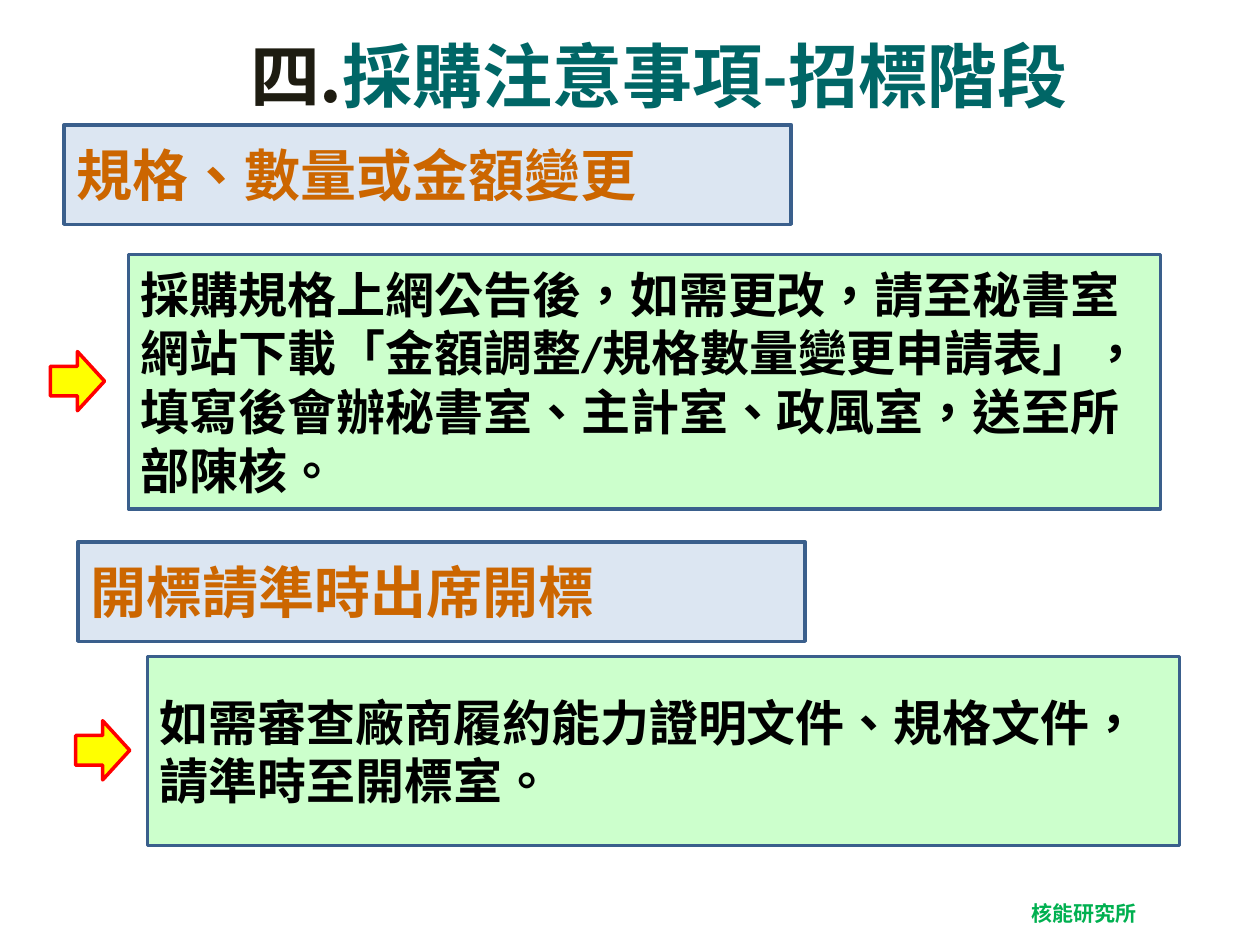
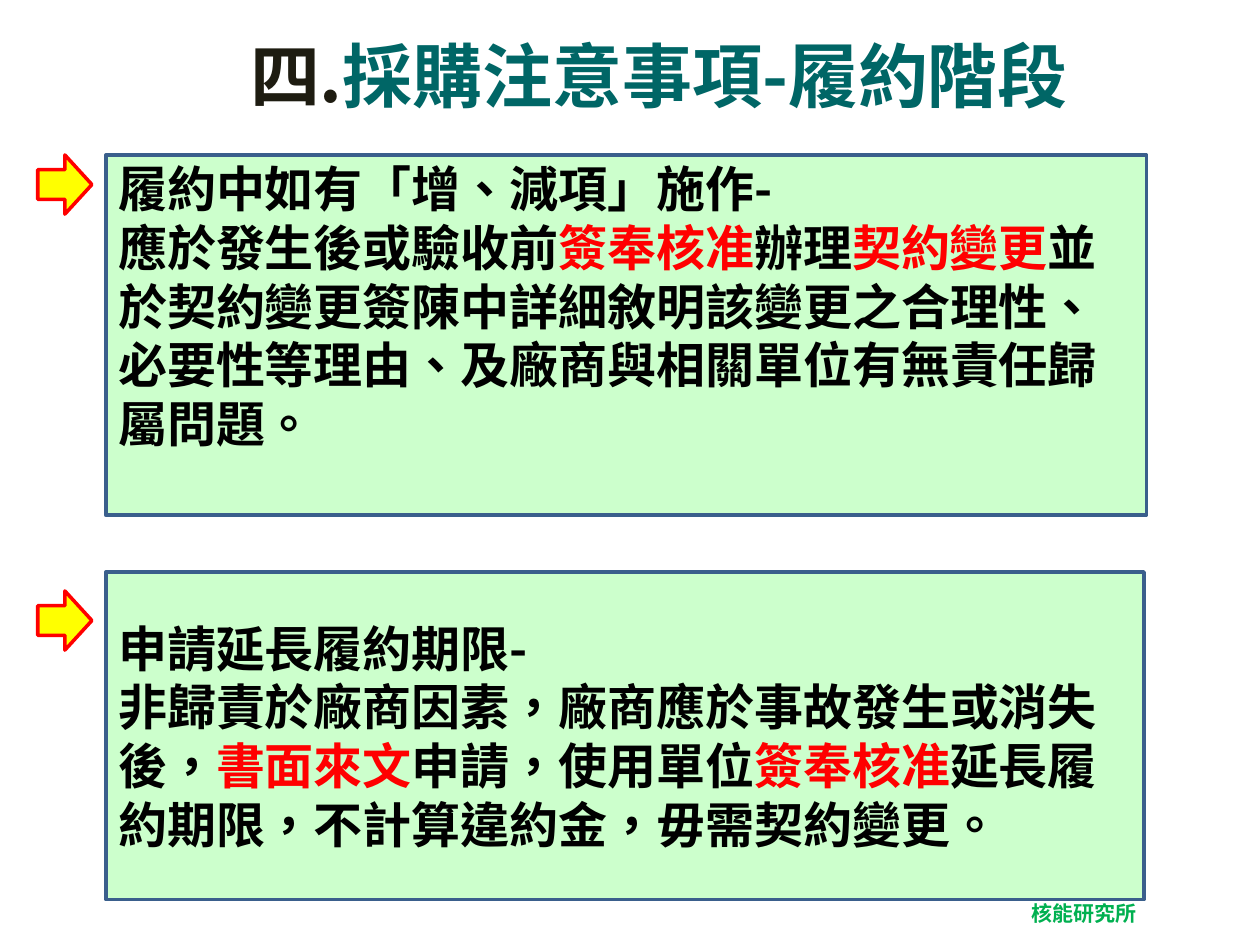
from pptx import Presentation
from pptx.dml.color import RGBColor
from pptx.enum.shapes import MSO_SHAPE as Shape
from pptx.enum.text import MSO_ANCHOR as Anchor, PP_ALIGN as Align
from pptx.oxml.ns import qn
from pptx.util import Inches, Pt
from lxml import etree

COLORS = {
    "number": "1E1C11", "title": "006666", "footer": "00B050",
    "heading": "CC6600", "heading_fill": "DCE6F2",
    "body": "000000", "body_fill": "CCFFCC", "border": "3A5F8C",
    "emphasis": "FF0000", "arrow_fill": "FFFF00", "arrow_line": "FF0000",
}
FONT = "Noto Sans CJK SC"
LATIN_FONT = "Calibri"
BODY_SIZE = 28


def color(name):
    return RGBColor.from_string(COLORS[name])


def write(frame, paragraphs, size):
    """Fill a frame; each paragraph is a list of (text, colour[, font])."""
    for index, spans in enumerate(paragraphs):
        para = frame.paragraphs[0] if index == 0 else frame.add_paragraph()
        para.alignment = Align.LEFT
        for text, tint, *font in spans:
            span = para.add_run()
            span.text = text
            span.font.size = Pt(size)
            span.font.bold = True
            span.font.color.rgb = color(tint)
            span.font.name = font[0] if font else FONT
            props = span._r.get_or_add_rPr()
            props.set("lang", "zh-TW")
            etree.SubElement(props, qn("a:ea")).set("typeface", FONT)


def add_text(page, left, top, width, height, spans, size):
    box = page.shapes.add_textbox(*map(Inches, (left, top, width, height)))
    box.text_frame.word_wrap = True
    write(box.text_frame, [spans], size)
    return box


def add_filled(page, kind, left, top, width, height, fill, line):
    shape = page.shapes.add_shape(kind, *map(Inches, (left, top, width, height)))
    shape.shadow.inherit = False
    shape.fill.solid()
    shape.fill.fore_color.rgb = color(fill)
    shape.line.color.rgb = color(line)
    shape.line.width = Pt(2)
    return shape


def add_panel(page, left, top, width, height, paragraphs, size=BODY_SIZE,
              fill="body_fill"):
    panel = add_filled(page, Shape.RECTANGLE, left, top, width, height, fill, "border")
    panel.text_frame.word_wrap = True
    panel.text_frame.vertical_anchor = Anchor.MIDDLE
    write(panel.text_frame, paragraphs, size)
    return panel


def add_heading(page, left, top, text):
    add_panel(page, left, top, 5.77, 0.79, [[(text, "heading")]], 32, "heading_fill")


def add_arrow(page, left, top):
    add_filled(page, Shape.RIGHT_ARROW, left, top, 0.43, 0.47, "arrow_fill", "arrow_line")


def add_page(deck, stage):
    """Add a page with the shared footer and title."""
    page = deck.slides.add_slide(deck.slide_layouts[6])
    footer = add_text(page, 8.1, 7.11, 1.02, 0.29, [("核能研究所", "footer")], 12)
    footer.text_frame.margin_left = Inches(0.09)
    footer.text_frame.margin_right = 0
    footer.text_frame.margin_top = footer.text_frame.margin_bottom = Inches(0.04)
    title = add_text(page, 1.36, 0.21, 7.74, 1.02,
                     [("四.", "number"), (f"採購注意事項-{stage}", "title")], 40)
    title.text_frame.paragraphs[0].alignment = Align.CENTER
    return page


def build_tender_page(deck):
    page = add_page(deck, "招標階段")
    add_heading(page, 0.51, 0.99, "規格、數量或金額變更")
    add_arrow(page, 0.4, 2.79)
    add_panel(page, 1.02, 2.02, 8.19, 2.02, [[
        ("採購規格上網公告後，如需更改，請至秘書室網站下載「", "body"),
        ("金額調整/規格數量變更申請表", "body", LATIN_FONT),
        ("」，填寫後會辦秘書室、主計室、政風室，送至所部陳核。", "body"),
    ]])
    add_heading(page, 0.62, 4.3, "開標請準時出席開標")
    add_panel(page, 1.17, 5.21, 8.19, 1.5, [[
        ("如需審查廠商履約能力證明文件、規格文件，請準時至開標室。", "body"),
    ]])
    add_arrow(page, 0.6, 5.72)


def build_contract_page(deck):
    page = add_page(deck, "履約階段")
    add_arrow(page, 0.3, 1.23)
    changes = add_panel(page, 0.84, 1.23, 8.26, 2.86, [
        [("履約中如有「增、減項」施作-", "body")],
        [("應於發生後或驗收前", "body"), ("簽奉核准", "emphasis"),
         ("辦理", "body"), ("契約變更", "emphasis"),
         ("並於契約變更簽陳中詳細敘明該變更之合理性、必要性等理由、"
          "及廠商與相關單位有無責任歸屬問題。", "body")],
    ])
    changes.text_frame.margin_bottom = Inches(0.52)
    add_panel(page, 0.84, 4.54, 8.24, 2.6, [
        [("申請延長履約期限-", "body")],
        [("非歸責於廠商因素，廠商應於事故發生或消失後，", "body"),
         ("書面來文", "emphasis"), ("申請，使用單位", "body"),
         ("簽奉核准", "emphasis"),
         ("延長履約期限，不計算違約金，毋需契約變更。", "body")],
    ])
    add_arrow(page, 0.3, 4.69)


def main():
    deck = Presentation()
    deck.slide_width, deck.slide_height = Inches(10), Inches(7.5)
    build_tender_page(deck)
    build_contract_page(deck)
    deck.save("out.pptx")


if __name__ == "__main__":
    main()
